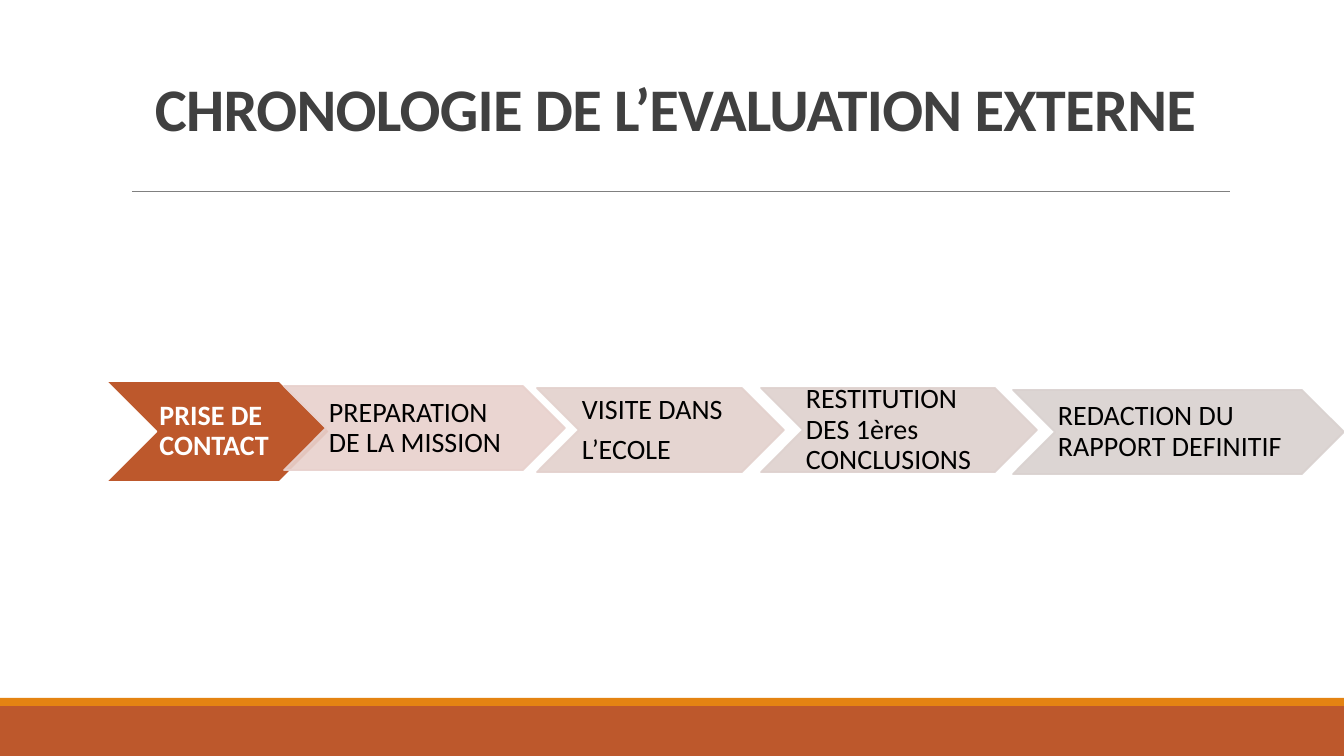
import pptx
import pptx.util
import pptx.dml.color
import pptx.enum.shapes
import pptx.enum.text
import pptx.oxml.ns
import pptx.oxml.xmlchemy

PX = 914400 / 100.8
SLIDE_W, SLIDE_H = 1344, 756
FONT = "Calibri"
RUST, ORANGE, WHITE, BLACK = "BD582C", "E48312", "FFFFFF", "000000"

STEPS = [
    ((106, 381, 224, 101), RUST, ["PRISE DE CONTACT"]),
    ((284, 386, 281, 84), "E8D1CD", ["PREPARATION DE LA MISSION"]),
    ((537, 388, 247, 84), "E3D1CD", ["VISITE DANS", "L’ECOLE"]),
    ((761, 388, 276, 84), "DED1CE", ["RESTITUTION DES 1ères CONCLUSIONS"]),
    ((1013, 390, 331, 84), "D9D1CF", ["REDACTION DU RAPPORT DEFINITIF"]),
]


def px(n):
    return pptx.util.Emu(round(n * PX))


def rgb(value):
    return pptx.dml.color.RGBColor.from_string(value)


def add_filled(s, kind, box, color):
    sp = s.shapes.add_shape(kind, *map(px, box))
    sp.shadow.inherit = False
    sp.fill.solid()
    sp.fill.fore_color.rgb = rgb(color)
    sp.line.fill.background()
    return sp


def set_opacity(sp, percent):
    for color in sp._element.spPr.iter(pptx.oxml.ns.qn("a:srgbClr")):
        alpha = pptx.oxml.xmlchemy.OxmlElement("a:alpha")
        alpha.set("val", str(percent * 1000))
        color.append(alpha)


def add_title(s, box, text):
    title = s.shapes.title
    title.left, title.top, title.width, title.height = map(px, box)
    tf = title.text_frame
    tf.word_wrap = True
    tf.auto_size = pptx.enum.text.MSO_AUTO_SIZE.NONE
    tf.vertical_anchor = pptx.enum.text.MSO_ANCHOR.BOTTOM
    p = tf.paragraphs[0]
    p.alignment = pptx.enum.text.PP_ALIGN.CENTER
    p.line_spacing = 0.85
    p.font.name = FONT
    p.font.size = pptx.util.Pt(43.2)
    p.font.bold = True
    p.font.color.rgb = rgb("404040")
    r = p.add_run()
    r.text = text
    r._r.get_or_add_rPr().set("spc", "-50")


def add_rule(s, box):
    left, top, width, height = box
    line = s.shapes.add_connector(
        pptx.enum.shapes.MSO_CONNECTOR.STRAIGHT,
        px(left), px(top), px(left + width), px(top + height))
    line.line.color.rgb = rgb("808080")
    line.line.width = pptx.util.Pt(0.5)
    line._element.spPr.append(pptx.oxml.xmlchemy.OxmlElement("a:effectLst"))


def add_footer(s, box, stripe):
    left, top, width, height = box
    rect = pptx.enum.shapes.MSO_SHAPE.RECTANGLE
    add_filled(s, rect, (left, top + stripe, width, height - stripe), RUST)
    add_filled(s, rect, (left, top, width, stripe), ORANGE)


def add_step(s, box, color, lines, current):
    sp = add_filled(s, pptx.enum.shapes.MSO_SHAPE.CHEVRON, box, color)
    sp.line.color.rgb = rgb(WHITE if current else color)
    sp.line.width = pptx.util.Pt(1.25)
    if not current:
        set_opacity(sp, 90)
    tf = sp.text_frame
    tf.word_wrap = True
    tf.vertical_anchor = pptx.enum.text.MSO_ANCHOR.MIDDLE
    tf.margin_left, tf.margin_right = px(3), 0
    tf.margin_top = tf.margin_bottom = px(1)
    tf.text = "\n".join(lines)
    for p in tf.paragraphs:
        p.alignment = pptx.enum.text.PP_ALIGN.LEFT
        p.line_spacing = 0.9
        p.space_after = pptx.util.Pt(7)
        p.font.name = FONT
        p.font.size = pptx.util.Pt(20)
        p.font.bold = current
        p.font.color.rgb = rgb(WHITE if current else BLACK)


def main():
    prs = pptx.Presentation()
    prs.slide_width, prs.slide_height = px(SLIDE_W), px(SLIDE_H)
    s = prs.slides.add_slide(prs.slide_layouts.get_by_name("Title Only"))
    add_footer(s, (0, 698, SLIDE_W, 58), 8)
    add_rule(s, (132, 191, 1098, 0))
    add_title(s, (121, 31, 1109, 118), "CHRONOLOGIE DE L’EVALUATION EXTERNE")
    for i, (box, color, lines) in enumerate(STEPS):
        add_step(s, box, color, lines, i == 0)
    prs.save("out.pptx")


if __name__ == "__main__":
    main()
